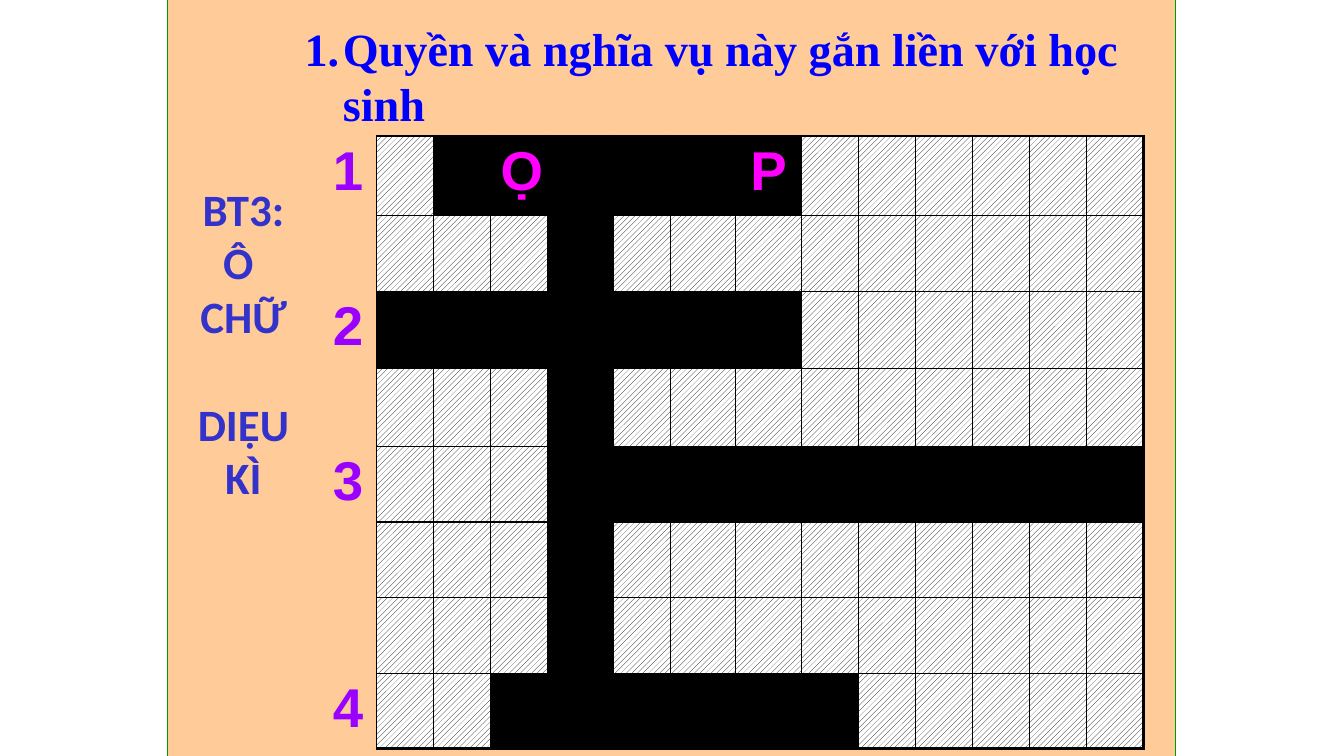
from lxml import etree
from pptx import Presentation, util as u
from pptx.dml.color import RGBColor
from pptx.enum import dml, shapes, text
from pptx.oxml.ns import qn

SLIDE_W, SLIDE_H = u.Inches(13.33), u.Inches(7.5)
BLACK, WHITE, PEACH = "000000", "FFFFFF", "FFCC99"
PURPLE, MAGENTA, BLUE, INDIGO, SILVER = "9900FF", "FF00FF", "0000FF", "3333CC", "B2B2B2"

# Crossword: the keyword runs down one column, each answer along one row
GRID_WIDTH, WIDE_WIDTH = 8.17, 0.65
COLUMNS, WIDE_COLUMNS, KEY_COLUMN = 14, (4, 6, 7), 4
ROW_HEIGHTS = [0.79, 0.75, 0.77, 0.77] + [0.75] * 4
ANSWERS = {0: range(2, 8), 2: range(1, 8), 4: range(4, 14), 7: range(3, 9)}
REVEALED = {(0, 3): "Ọ", (0, 7): "P"}


def colour(value):
    return RGBColor.from_string(value)


def sub(parent, tag, **attributes):
    return etree.SubElement(parent, qn(tag), attributes)


def write(frame, lines, size, font, fill, align=text.PP_ALIGN.CENTER):
    """Fill a text frame with one paragraph per line and return the runs."""
    runs = []
    for i, line in enumerate(lines):
        paragraph = frame.paragraphs[0] if i == 0 else frame.add_paragraph()
        paragraph.alignment = align
        run = paragraph.add_run()
        run.text = line
        run.font.size, run.font.name, run.font.bold = u.Pt(size), font, True
        run.font.color.rgb = colour(fill)
        runs.append(run)
    return runs


def outline_text(run, stroke, alpha):
    """Give letters a 1 pt outline and a see-through fill."""
    properties = run.font.fill._xPr
    sub(properties.find(qn("a:solidFill"))[0], "a:alpha", val=str(alpha * 1000))
    line = etree.Element(qn("a:ln"), w=str(u.Pt(1)))
    sub(sub(line, "a:solidFill"), "a:srgbClr", val=stroke)
    properties.insert(0, line)


def set_borders(cell, widths):
    """Draw left, right, top and bottom borders; a width of 0 hides one."""
    properties = cell._tc.get_or_add_tcPr()
    for i, (side, width) in enumerate(zip("LRTB", widths)):
        line = etree.Element(qn(f"a:ln{side}"), w=str(u.Pt(width)))
        if width:
            sub(sub(line, "a:solidFill"), "a:srgbClr", val=BLACK)
        else:
            sub(line, "a:noFill")
        properties.insert(i, line)


def fill_cell(cell, row, column):
    if column == 0:
        cell.fill.solid()
        cell.fill.fore_color.rgb = colour(PEACH)
    elif column == KEY_COLUMN or column in ANSWERS.get(row, ()):
        cell.fill.solid()
        cell.fill.fore_color.rgb = colour(BLACK)
    else:
        cell.fill.patterned()
        cell.fill.pattern = dml.MSO_PATTERN.WIDE_UPWARD_DIAGONAL
        cell.fill.fore_color.rgb = colour(BLACK)
        cell.fill.back_color.rgb = colour(WHITE)


def add_backdrop(slide):
    backdrop = slide.shapes.add_shape(
        shapes.MSO_SHAPE.RECTANGLE, int(SLIDE_W * 0.125), u.Inches(-0.08),
        int(SLIDE_W * 0.75), u.Inches(7.85))
    backdrop.shadow.inherit = False
    backdrop.fill.solid()
    backdrop.fill.fore_color.rgb = colour(PEACH)
    backdrop.line.color.rgb = colour("009900")
    backdrop.line.width = u.Pt(0.75)


def add_crossword(slide):
    rows = len(ROW_HEIGHTS)
    crossword = slide.shapes.add_table(
        rows, COLUMNS, u.Inches(3.17), u.Inches(1.35),
        u.Inches(GRID_WIDTH), u.Inches(sum(ROW_HEIGHTS))).table
    crossword.first_row = crossword.horz_banding = False
    narrow = (GRID_WIDTH - WIDE_WIDTH * len(WIDE_COLUMNS)) / (COLUMNS - len(WIDE_COLUMNS))
    for i, column in enumerate(crossword.columns):
        column.width = u.Inches(WIDE_WIDTH if i in WIDE_COLUMNS else narrow)
    for i, height in enumerate(ROW_HEIGHTS):
        crossword.rows[i].height = u.Inches(height)

    numbers = {(row, 0): str(n) for n, row in enumerate(ANSWERS, 1)}
    letters = numbers | REVEALED
    for r in range(rows):
        for c in range(COLUMNS):
            cell = crossword.cell(r, c)
            fill_cell(cell, r, c)
            if c == 0:
                set_borders(cell, (0, 1, 0, 0))
            else:
                set_borders(cell, (1, 2.25 if c == COLUMNS - 1 else 1,
                                   2.25 if r == 0 else 1,
                                   2.25 if r == rows - 1 else 1))
            if (r, c) in letters:
                write(cell.text_frame, [letters[r, c]], size=39, font="Arial",
                      fill=MAGENTA if c else PURPLE)


def add_side_heading(slide):
    box = slide.shapes.add_textbox(u.Inches(1.83), u.Inches(1.75),
                                   u.Inches(1.17), u.Inches(5.33))
    box.text_frame.word_wrap = False
    for run in write(box.text_frame, ["BT3:", "Ô ", "CHỮ", " DIỆU", "KÌ"],
                     size=32, font="Calibri", fill=SILVER):
        outline_text(run, INDIGO, alpha=50)


def format_question(slide):
    question = slide.shapes.title
    question.left, question.top = u.Inches(2.92), u.Inches(0.15)
    question.width, question.height = u.Inches(8.75), u.Inches(1.2)
    frame = question.text_frame
    frame.word_wrap = True
    frame.auto_size = text.MSO_AUTO_SIZE.NONE
    frame.vertical_anchor = text.MSO_ANCHOR.BOTTOM
    write(frame, ["Quyền và nghĩa vụ này gắn liền với học sinh"], size=33,
          font="Times New Roman", fill=BLUE, align=text.PP_ALIGN.LEFT)
    # Numbered with a hanging indent
    properties = frame.paragraphs[0]._p.get_or_add_pPr()
    properties.set("marL", str(u.Inches(0.38)))
    properties.set("indent", str(u.Inches(-0.38)))
    sub(properties, "a:buFont", typeface="Times New Roman")
    sub(properties, "a:buAutoNum", type="arabicPeriod")
    # Bring the question in front of the backdrop
    slide.shapes.element.append(question.element)


def main():
    deck = Presentation()
    deck.slide_width, deck.slide_height = SLIDE_W, SLIDE_H
    slide = deck.slides.add_slide(deck.slide_layouts.get_by_name("Title Only"))
    add_backdrop(slide)
    add_crossword(slide)
    add_side_heading(slide)
    format_question(slide)
    deck.save("out.pptx")


if __name__ == "__main__":
    main()
